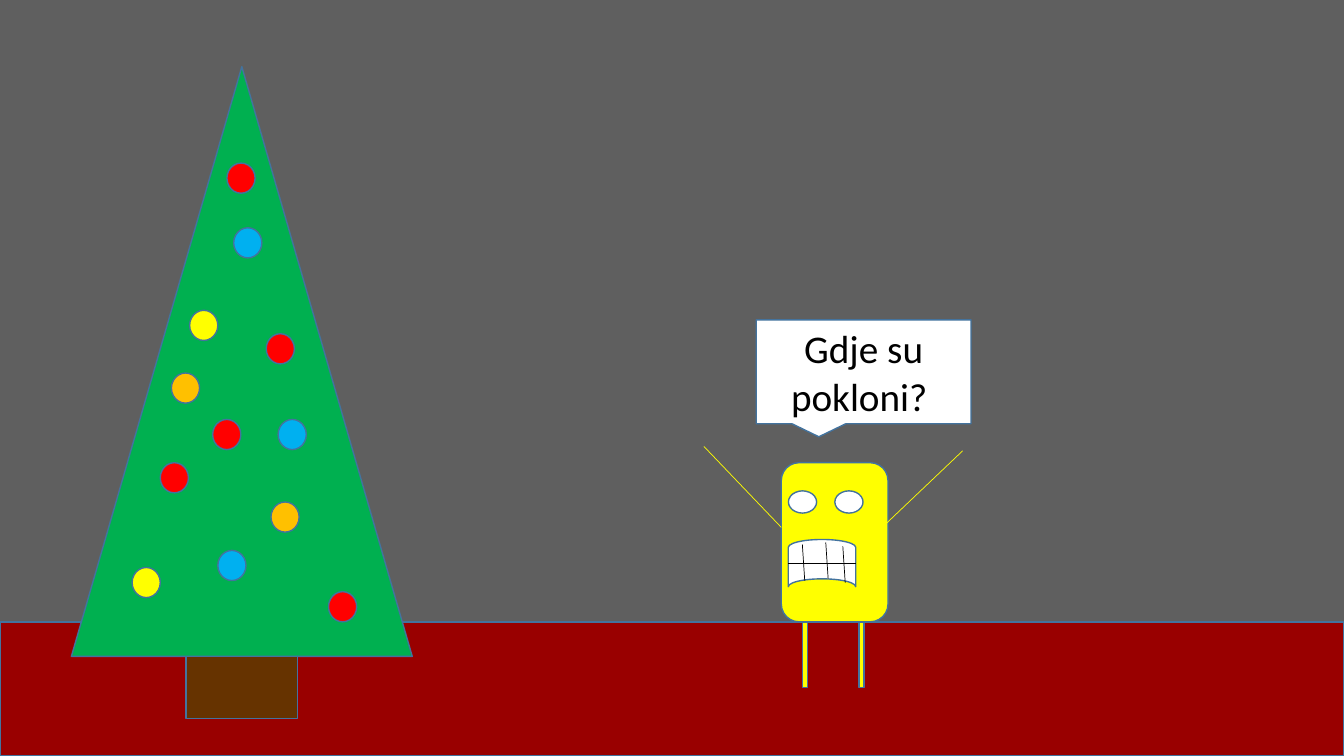
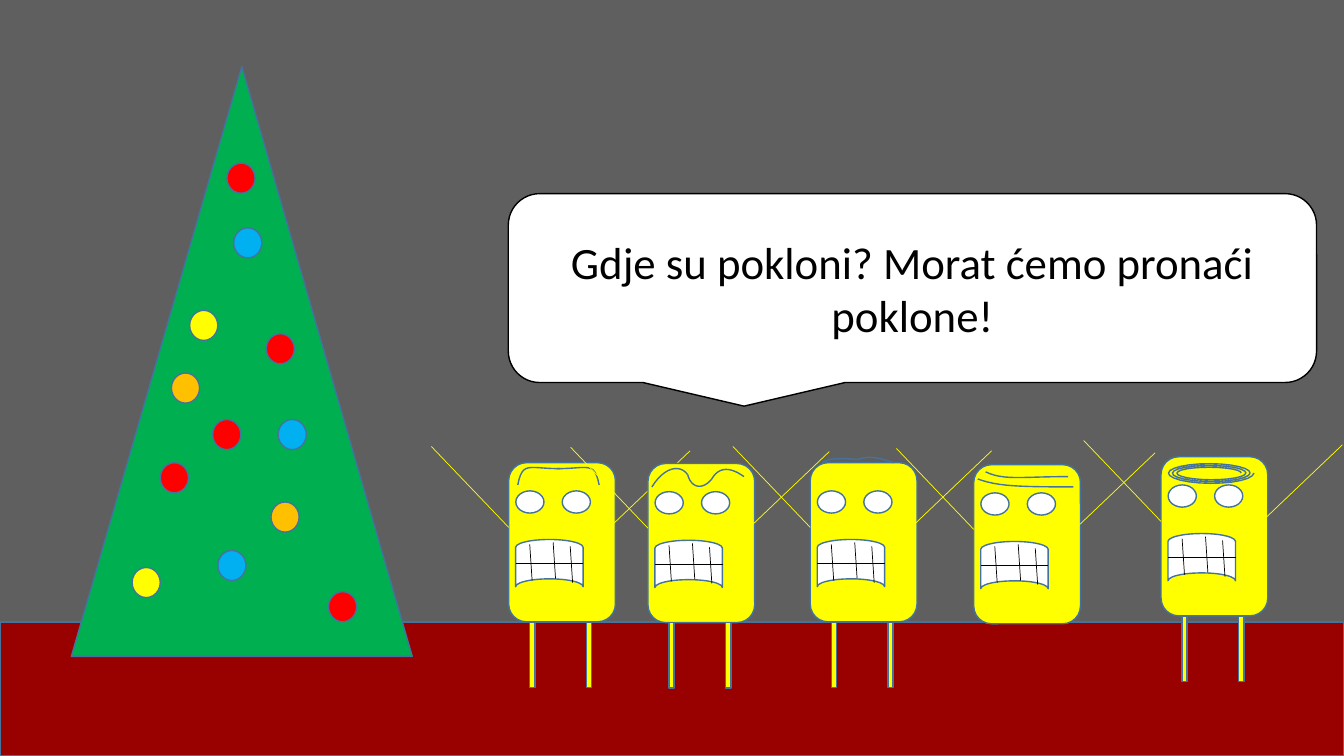
from dataclasses import dataclass
from math import cos, pi, sin

from lxml import etree
from pptx import Presentation
from pptx.dml.color import RGBColor
from pptx.enum.shapes import MSO_CONNECTOR, MSO_SHAPE
from pptx.enum.text import MSO_ANCHOR, PP_ALIGN
from pptx.oxml.ns import qn
from pptx.util import Cm, Pt

RECT = MSO_SHAPE.RECTANGLE
OVAL = MSO_SHAPE.OVAL
TRIANGLE = MSO_SHAPE.ISOSCELES_TRIANGLE
ROUND_RECT = MSO_SHAPE.ROUNDED_RECTANGLE
STORED_DATA = MSO_SHAPE.FLOWCHART_STORED_DATA
RECT_CALLOUT = MSO_SHAPE.RECTANGULAR_CALLOUT
ROUND_CALLOUT = MSO_SHAPE.ROUNDED_RECTANGULAR_CALLOUT
STRAIGHT = MSO_CONNECTOR.STRAIGHT
MIDDLE = MSO_ANCHOR.MIDDLE
CENTER = PP_ALIGN.CENTER


@dataclass(frozen=True)
class Theme:
    wall: RGBColor = RGBColor(0x5F, 0x5F, 0x5F)
    floor: RGBColor = RGBColor(0x99, 0x00, 0x00)
    green: RGBColor = RGBColor(0x00, 0xB0, 0x50)
    brown: RGBColor = RGBColor(0x66, 0x33, 0x00)
    yellow: RGBColor = RGBColor(0xFF, 0xFF, 0x00)
    red: RGBColor = RGBColor(0xFF, 0x00, 0x00)
    blue: RGBColor = RGBColor(0x00, 0xB0, 0xF0)
    orange: RGBColor = RGBColor(0xFF, 0xC0, 0x00)
    white: RGBColor = RGBColor(0xFF, 0xFF, 0xFF)
    black: RGBColor = RGBColor(0x00, 0x00, 0x00)
    outline: RGBColor = RGBColor(0x43, 0x73, 0x9E)
    font: str = "Calibri"
    small_speech: Pt = Pt(28)
    large_speech: Pt = Pt(32)
    outline_width: Pt = Pt(1)
    thin_width: Pt = Pt(0.5)


@dataclass(frozen=True)
class Figure:
    left: float
    top: float
    hair: str
    has_legs: bool = True


@dataclass(frozen=True)
class Scene:
    has_trunk: bool
    figures: list
    callout: tuple
    callout_line: RGBColor
    speech: str
    speech_size: Pt


T = Theme()


def add_shape(s, kind, left, top, width, height, fill, line=T.outline):
    sp = s.shapes.add_shape(kind, Cm(left), Cm(top), Cm(width), Cm(height))
    sp.shadow.inherit = False
    sp.fill.solid()
    sp.fill.fore_color.rgb = fill
    sp.line.color.rgb = line
    sp.line.width = T.outline_width
    return sp


def add_line(s, x1, y1, x2, y2, color):
    cn = s.shapes.add_connector(STRAIGHT, Cm(x1), Cm(y1), Cm(x2), Cm(y2))
    cn.line.color.rgb = color
    cn.line.width = T.thin_width
    etree.SubElement(cn._element.spPr, qn("a:effectLst"))


SLIDE_W, SLIDE_H = 33.87, 19.05
FLOOR_TOP = 15.67
TREE_LEFT, TREE_TOP, TREE_W, TREE_H = 1.8, 1.68, 8.59, 14.86
TRUNK_W, TRUNK_H = 2.82, 1.57
BAUBLE_W, BAUBLE_H = 0.71, 0.76
BAUBLES = {
    T.red: [(5.72, 4.11), (6.71, 8.41), (5.36, 10.57), (4.04, 11.66),
            (8.28, 14.91)],
    T.blue: [(5.89, 5.74), (7.01, 10.57), (5.49, 13.87)],
    T.yellow: [(4.78, 7.82), (3.33, 14.3)],
    T.orange: [(4.32, 9.4), (6.83, 12.65)],
}

BODY_W, BODY_H = 2.69, 4.01
EYE_LEFTS, EYE_TOP, EYE_W, EYE_H = (0.18, 1.35), 0.71, 0.71, 0.56
MOUTH_LEFT, MOUTH_TOP, MOUTH_W, MOUTH_H = 0.43, 1.68, 1.19, 1.7
LEG_LEFTS, LEG_W, LEG_H = (0.53, 1.96), 0.13, 1.65
TOOTH_TOPS = [(0.53, 2.06), (1.12, 2.01), (1.55, 2.11)]
TOOTH_SLANT, TOOTH_H = 0.06, 0.91
BITE = (0.18, 2.54, 1.88, 2.54)
ARMS = [(2.54, 1.63, 4.57, -0.3), (0, 1.63, -1.95, -0.41)]

TEETH = [(x, y, x + TOOTH_SLANT, y + TOOTH_H) for x, y in TOOTH_TOPS] + [BITE]
FACE_AND_ARM_LINES = [(TEETH, T.black), (ARMS, T.yellow)]

FRINGE = [(0.23, 0.56), (0.35, -0.05), (0.5, 0.15), (1.29, 0.15)]
HAIR_CURVES = {
    "fringe": [FRINGE, [(2.51 - x, y) for x, y in FRINGE]],
    "wave": [
        [(0.1, 0.59), (0.4, 0.1), (0.8, 0), (1, 0.28)],
        [(1, 0.28), (1.1, 0.65), (1.4, 0.65), (1.6, 0.4)],
        [(1.6, 0.4), (1.8, 0.05), (2.1, 0.1), (2.42, 0.33)],
    ],
    "tuft": [
        [(0.3, 0), (0.5, -0.15), (0.9, -0.1), (1.2, -0.08)],
        [(1.2, -0.08), (1.5, -0.2), (1.8, -0.1), (2.1, 0)],
    ],
    "combed": [
        [(0.1, 0.36), (0.6, 0.55), (1.2, 0.56), (2.51, 0.56)],
        [(0.3, 0.18), (0.75, 0.4), (1.2, 0.3), (2.38, 0.3)],
    ],
}

CURVE_STEPS = 12
HAIR = {"bald": []}
for style, curves in HAIR_CURVES.items():
    HAIR[style] = []
    for curve in curves:
        strand = []
        for step in range(CURVE_STEPS + 1):
            t = step / CURVE_STEPS
            weights = [(1 - t)**3, 3 * t * (1 - t)**2, 3 * t**2 * (1 - t), t**3]
            strand.append([sum(w * v for w, v in zip(weights, axis))
                           for axis in zip(*curve)])
        HAIR[style].append(strand)

LOOPS, LOOP_STEPS = 3, 24
SCRIBBLE_X, SCRIBBLE_Y, SCRIBBLE_RX, SCRIBBLE_RY = 1.24, 0.41, 1.1, 0.27
scribble = []
for step in range(LOOPS * LOOP_STEPS + 1):
    angle = 2 * pi * step / LOOP_STEPS
    shrink = 1 - 0.5 * step / (LOOPS * LOOP_STEPS)
    scribble.append((SCRIBBLE_X + SCRIBBLE_RX * shrink**0.5 * cos(angle),
                     SCRIBBLE_Y + SCRIBBLE_RY * shrink * sin(angle)))
HAIR["scribble"] = [scribble]

SCENES = [
    Scene(
        has_trunk=True,
        figures=[Figure(19.69, 11.66, "bald")],
        callout=(RECT_CALLOUT, 19.06, 8.06, 5.41, 2.62),
        callout_line=T.outline,
        speech="Gdje su pokloni? ",
        speech_size=T.small_speech,
    ),
    Scene(
        has_trunk=False,
        figures=[
            Figure(20.42, 11.66, "tuft"),
            Figure(24.54, 11.71, "combed", has_legs=False),
            Figure(12.82, 11.66, "fringe"),
            Figure(16.33, 11.68, "wave"),
            Figure(29.26, 11.51, "scribble"),
        ],
        callout=(ROUND_CALLOUT, 12.81, 4.88, 20.37, 4.76),
        callout_line=T.black,
        speech="Gdje su pokloni? Morat ćemo pronaći poklone!",
        speech_size=T.large_speech,
    ),
]

prs = Presentation()
prs.slide_width, prs.slide_height = Cm(SLIDE_W), Cm(SLIDE_H)
wall = prs.slide_master.background.fill
wall.solid()
wall.fore_color.rgb = T.wall

for scene in SCENES:
    s = prs.slides.add_slide(prs.slide_layouts[6])

    add_shape(s, RECT, 0, FLOOR_TOP, SLIDE_W, SLIDE_H - FLOOR_TOP, T.floor)
    add_shape(s, TRIANGLE, TREE_LEFT, TREE_TOP, TREE_W, TREE_H, T.green)
    if scene.has_trunk:
        trunk_left = TREE_LEFT + (TREE_W - TRUNK_W) / 2
        add_shape(s, RECT, trunk_left, TREE_TOP + TREE_H, TRUNK_W, TRUNK_H,
                  T.brown)
    for color, places in BAUBLES.items():
        for left, top in places:
            add_shape(s, OVAL, left, top, BAUBLE_W, BAUBLE_H, color)

    for figure in scene.figures:
        x, y = figure.left, figure.top
        add_shape(s, ROUND_RECT, x, y, BODY_W, BODY_H, T.yellow)
        for dx in EYE_LEFTS:
            add_shape(s, OVAL, x + dx, y + EYE_TOP, EYE_W, EYE_H, T.white)
        mouth = add_shape(s, STORED_DATA, x + MOUTH_LEFT, y + MOUTH_TOP,
                          MOUTH_W, MOUTH_H, T.white)
        mouth.rotation = 90
        if figure.has_legs:
            for dx in LEG_LEFTS:
                add_shape(s, RECT, x + dx, y + BODY_H, LEG_W, LEG_H, T.yellow)
        for lines, color in FACE_AND_ARM_LINES:
            for x1, y1, x2, y2 in lines:
                add_line(s, x + x1, y + y1, x + x2, y + y2, color)
        for strand in HAIR[figure.hair]:
            start, *rest = [(Cm(x + dx), Cm(y + dy)) for dx, dy in strand]
            builder = s.shapes.build_freeform(*start)
            builder.add_line_segments(rest, close=False)
            hair = builder.convert_to_shape()
            hair.shadow.inherit = False
            hair.fill.background()
            hair.line.color.rgb = T.outline
            hair.line.width = T.outline_width

    bubble = add_shape(s, *scene.callout, T.white, scene.callout_line)
    tf = bubble.text_frame
    tf.word_wrap = True
    tf.vertical_anchor = MIDDLE
    p = tf.paragraphs[0]
    p.alignment = CENTER
    r = p.add_run()
    r.text = scene.speech
    r.font.name = T.font
    r.font.size = scene.speech_size
    r.font.color.rgb = T.black

prs.save("out.pptx")
